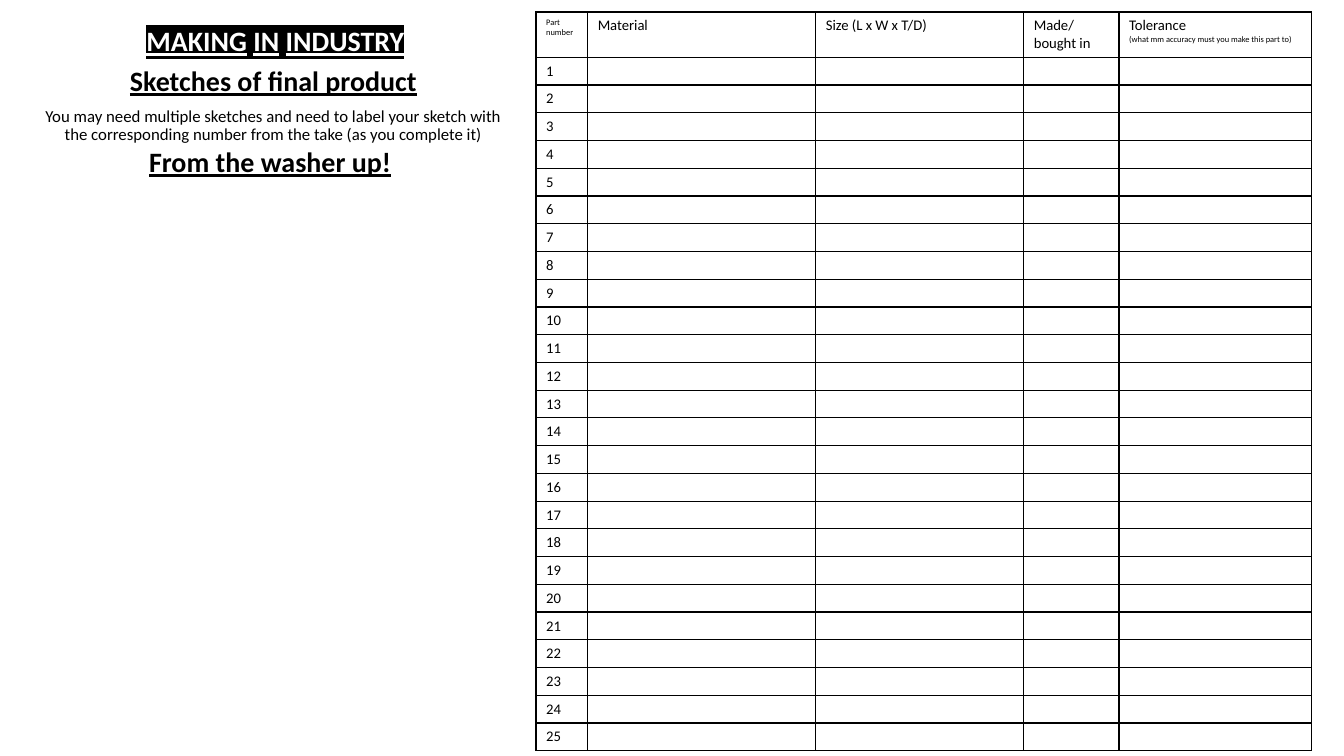
from lxml.etree import SubElement
from pptx import Presentation
from pptx.dml.color import RGBColor
from pptx.enum.text import MSO_ANCHOR, PP_ALIGN
from pptx.oxml.ns import qn
from pptx.util import Cm, Pt

COLORS = {"ink": "000000", "paper": "FFFFFF"}
FONT = "Calibri"
BODY, SMALL = 10.5, 6
HEADING = {"size": Pt(20), "bold": True, "underline": True}
NOTE = {"size": Pt(12)}

COL_WIDTHS = [1.3, 5.75, 5.24, 2.4, 4.86]
ROW_HEIGHT = 0.68
PART_COUNT = 25
HEADERS = [
    [("Part number", SMALL)],
    [("Material", BODY)],
    [("Size (L x W x T/D)", BODY)],
    [("Made/ bought in", BODY)],
    [("Tolerance", BODY), ("(what mm accuracy must you make this part to)", SMALL)],
]


def add_run(p, text, fmt, color="ink", highlight=None):
    r = p.add_run()
    r.text = text
    for name, value in {"name": FONT, **fmt}.items():
        setattr(r.font, name, value)
    r.font.color.rgb = RGBColor.from_string(COLORS[color])
    if highlight:
        rPr = r.font._element
        mark = SubElement(rPr, qn("a:highlight"))
        SubElement(mark, qn("a:srgbClr"), val=COLORS[highlight])
        rPr.find(qn("a:solidFill")).addnext(mark)


def add_line(s, box, runs, fmt):
    """Centred text resting on the bottom of its box."""
    tf = s.shapes.add_textbox(*(Cm(v) for v in box)).text_frame
    tf.word_wrap = True
    tf.vertical_anchor = MSO_ANCHOR.BOTTOM
    p = tf.paragraphs[0]
    p.alignment = PP_ALIGN.CENTER
    p.line_spacing = 0.9
    for text, *style in runs:
        add_run(p, text, fmt, *style)


def add_sketch_panel(s, left, top, width):
    """Headings and instructions above the sketching space."""
    inset, height = 1.3, 1.07
    head_left, head_width = left + inset, width - 2 * inset
    banner = [("MAKING", "paper", "ink"), (" ", "ink", "ink"), ("IN", "paper", "ink"),
              (" ", "ink", "ink"), ("INDUSTRY", "paper", "ink")]
    note = ("You may need multiple sketches and need to label your sketch with "
            "the corresponding number from the take (as you complete it)")
    add_line(s, (head_left + 0.05, top, head_width, height), banner, HEADING)
    add_line(s, (head_left, top + 1.01, head_width, height),
             [("Sketches of final product",)], HEADING)
    add_line(s, (left, top + 2.18, width, height), [(note,)], NOTE)
    add_line(s, (head_left - 0.08, top + 3.05, head_width, height),
             [("From the washer up!",)], HEADING)


def format_cell(cell, lines):
    tf = cell.text_frame
    for i, (text, size) in enumerate(lines):
        p = tf.add_paragraph() if i else tf.paragraphs[0]
        add_run(p, text, {"size": Pt(size)})
    if not lines:
        # An empty cell keeps the body text height
        SubElement(tf.paragraphs[0]._p, qn("a:endParaRPr"), sz=str(int(BODY * 100)))
    tcPr = cell._tc.get_or_add_tcPr()
    for side in ("lnL", "lnR", "lnT", "lnB"):
        ln = SubElement(tcPr, qn(f"a:{side}"), w=str(Pt(1)))
        fill = SubElement(ln, qn("a:solidFill"))
        SubElement(fill, qn("a:srgbClr"), val=COLORS["ink"])
    cell.fill.background()


def add_parts_table(s, left, top):
    """Parts list: a header row and one numbered row per part."""
    rows = [HEADERS]
    for number in range(1, PART_COUNT + 1):
        rows.append([[(str(number), BODY)]] + [[]] * (len(HEADERS) - 1))
    table = s.shapes.add_table(
        len(rows), len(COL_WIDTHS), Cm(left), Cm(top),
        Cm(sum(COL_WIDTHS)), Cm(ROW_HEIGHT * len(rows))).table
    table.first_row = table.horz_banding = False
    for column, width in zip(table.columns, COL_WIDTHS):
        column.width = Cm(width)
    for i, row in enumerate(rows):
        table.rows[i].height = Cm(ROW_HEIGHT)
        for j, lines in enumerate(row):
            format_cell(table.cell(i, j), lines)


def main():
    prs = Presentation()
    prs.slide_width, prs.slide_height = Cm(33.87), Cm(19.05)
    s = prs.slides.add_slide(prs.slide_layouts[6])
    add_sketch_panel(s, 0.69, 0.51, 12.4)
    add_parts_table(s, 13.51, 0.3)
    prs.save("out.pptx")


if __name__ == "__main__":
    main()
